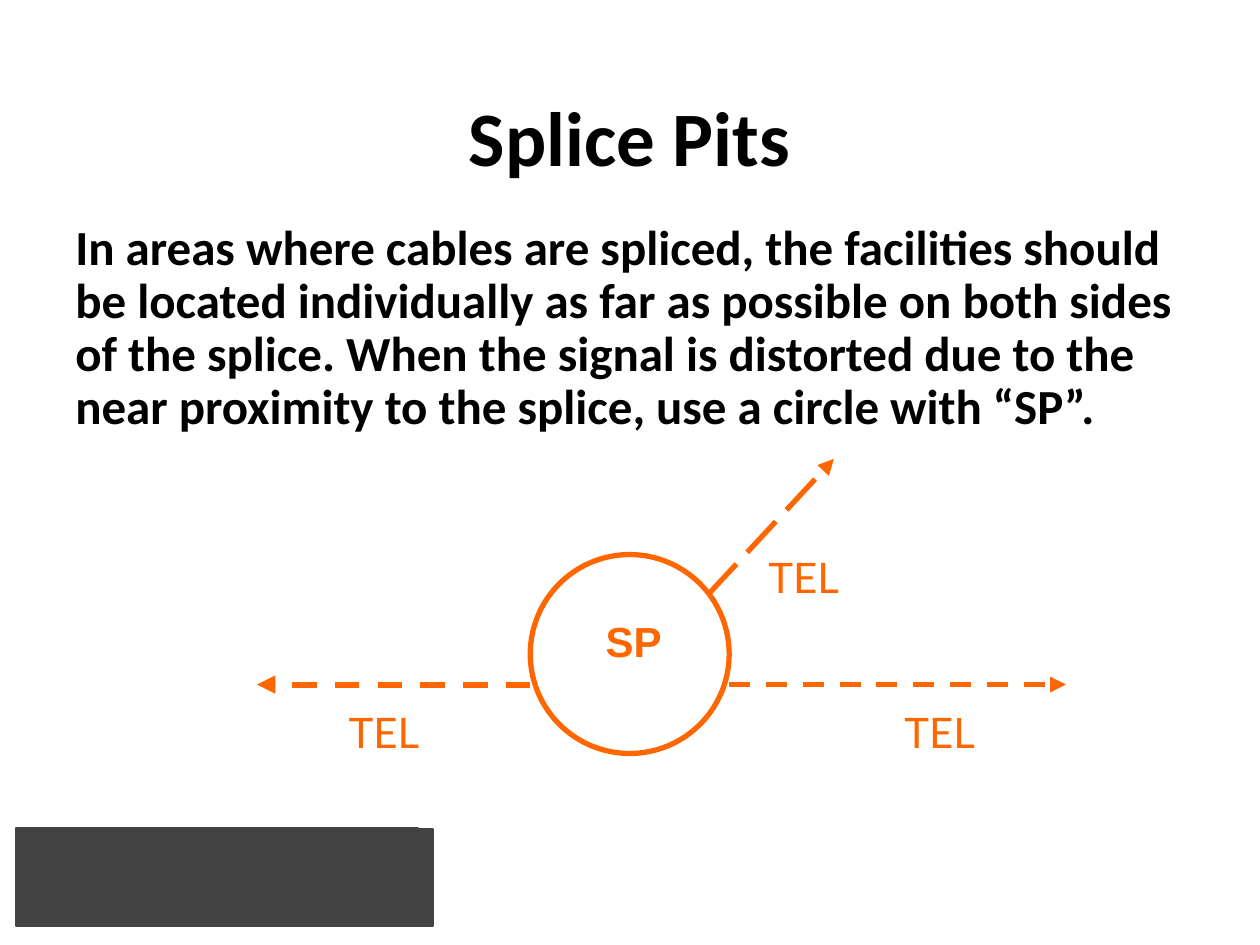
"""Build the slide on marking splice pits."""
from pptx import Presentation
from pptx.dml.color import RGBColor
from pptx.enum.dml import MSO_LINE_DASH_STYLE as Dash
from pptx.enum.shapes import MSO_CONNECTOR, MSO_SHAPE
from pptx.enum.text import MSO_ANCHOR, PP_ALIGN
from pptx.oxml.ns import qn
from pptx.util import Cm, Pt
from lxml.etree import SubElement

BLACK = RGBColor(0x00, 0x00, 0x00)
ORANGE = RGBColor(0xFF, 0x66, 0x00)
GRAY = RGBColor(0x43, 0x43, 0x43)

TITLE = "Splice Pits"
BODY = (
    "In areas where cables are spliced, the facilities should be located "
    "individually as far as possible on both sides of the splice. When the "
    "signal is distorted due to the near proximity to the splice, use a "
    "circle with “SP”."
)
FOOTER_BLOCKS = [(0.33, 16.69, 8.1, 1.98), (0.53, 16.71, 8.2, 1.96)]
PIT = (10.69, 11.18, 4.01, 4.01)
CABLES = [
    ((14.7, 13.8), (21.49, 13.8), 3, Dash.DASH),
    ((10.69, 13.8), (5.18, 13.8), 3.5, Dash.DASH),
    ((14.27, 11.99), (16.81, 9.25), 3, Dash.LONG_DASH),
]
PIT_LABEL = ("SP", (11.96, 12.29, 1.91, 1.27))
CABLE_LABEL = "TEL"
CABLE_LABEL_CORNERS = [(15.24, 11), (6.78, 14.12), (17.98, 14.12)]
CABLE_LABEL_SIZE = (2.34, 1.27)


def add_shape(slide, kind, box, color, width, filled=False):
    shape = slide.shapes.add_shape(kind, *map(Cm, box))
    shape.shadow.inherit = False
    shape.line.color.rgb = color
    shape.line.width = Pt(width)
    if filled:
        shape.fill.solid()
        shape.fill.fore_color.rgb = color
    else:
        shape.fill.background()


def add_text(slide, text, box, font, size, color, bold=False, spacing=1.0,
             align=PP_ALIGN.LEFT, anchor=MSO_ANCHOR.TOP):
    frame = slide.shapes.add_textbox(*map(Cm, box)).text_frame
    frame.word_wrap = True
    frame.vertical_anchor = anchor
    paragraph = frame.paragraphs[0]
    paragraph.text = text
    paragraph.alignment = align
    paragraph.line_spacing = spacing
    paragraph.font.name = font
    paragraph.font.size = Pt(size)
    paragraph.font.bold = bold
    paragraph.font.color.rgb = color


def add_cable(slide, start, end, width, dash):
    cable = slide.shapes.add_connector(
        MSO_CONNECTOR.STRAIGHT, *map(Cm, start + end))
    cable.line.color.rgb = ORANGE
    cable.line.width = Pt(width)
    cable.line.dash_style = dash
    properties = cable._element.spPr
    SubElement(properties.find(qn("a:ln")), qn("a:tailEnd"), type="triangle")
    SubElement(properties, qn("a:effectLst"))


def main():
    presentation = Presentation()
    presentation.slide_width = Cm(25.4)
    presentation.slide_height = Cm(19.05)
    slide = presentation.slides.add_slide(presentation.slide_layouts[6])

    for box in FOOTER_BLOCKS:
        add_shape(slide, MSO_SHAPE.RECTANGLE, box, GRAY, 1, filled=True)

    add_text(slide, TITLE, (1.75, 1.02, 21.89, 3.68), "Calibri", 44, BLACK,
             True, 0.9, PP_ALIGN.CENTER, MSO_ANCHOR.MIDDLE)
    add_text(slide, BODY, (1.27, 4.37, 23.29, 12.57), "Calibri", 28, BLACK,
             True, 0.9)

    add_shape(slide, MSO_SHAPE.OVAL, PIT, ORANGE, 3)
    for cable in CABLES:
        add_cable(slide, *cable)

    add_text(slide, *PIT_LABEL, "Arial", 24, ORANGE, True)
    for corner in CABLE_LABEL_CORNERS:
        add_text(slide, CABLE_LABEL, corner + CABLE_LABEL_SIZE, "Lato", 24,
                 ORANGE)

    presentation.save("out.pptx")


if __name__ == "__main__":
    main()
